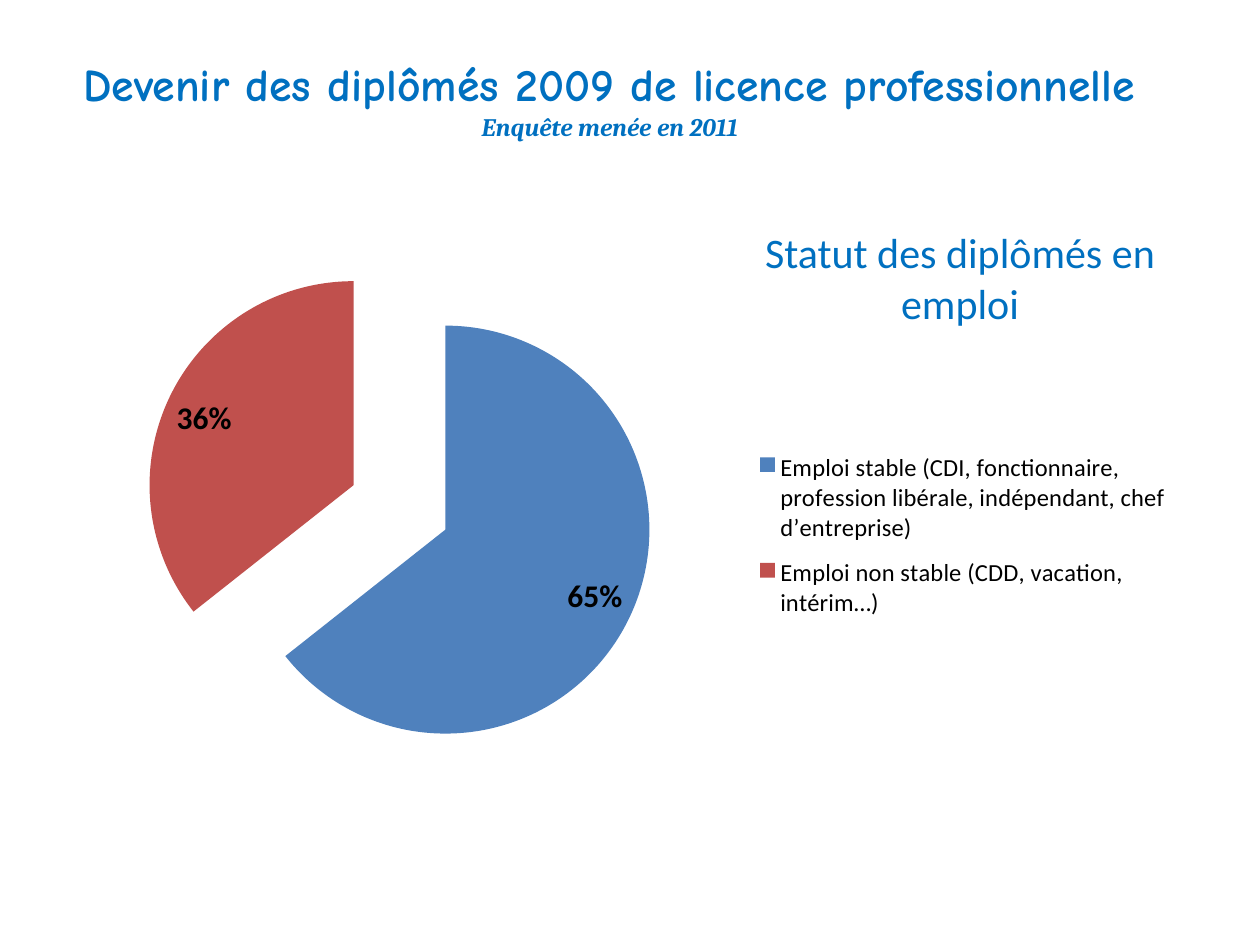
from dataclasses import dataclass

from lxml import etree
from pptx import Presentation
from pptx.chart.data import CategoryChartData
from pptx.dml.color import RGBColor
from pptx.enum import chart as ch, text
from pptx.oxml import ns
from pptx.util import Cm, Pt


@dataclass(frozen=True)
class Theme:
    accent: RGBColor = RGBColor(0x00, 0x70, 0xC0)
    ink: RGBColor = RGBColor(0, 0, 0)
    slices: tuple = (RGBColor(0x4F, 0x81, 0xBD), RGBColor(0xC0, 0x50, 0x4D))
    body_font: str = "Calibri"
    title_font: str = "Comic Neue"
    note_font: str = "Cambria"
    title: float = 26.1
    note: float = 14.4
    heading: float = 24
    label: float = 18
    legend: float = 14


THEME = Theme()


def style(font, name, size, color, bold=False, italic=False):
    font.name, font.size, font.color.rgb = name, Pt(size), color
    font.bold, font.italic = bold, italic


def add_text(s, box, lines, anchor=text.MSO_ANCHOR.TOP):
    """Centred text box; each line is (wording, font, size, bold, italic)."""
    tf = s.shapes.add_textbox(*map(Cm, box)).text_frame
    tf.word_wrap = True
    tf.vertical_anchor = anchor
    tf.text = "\n".join(line[0] for line in lines)
    for p, (_, name, size, bold, italic) in zip(tf.paragraphs, lines):
        p.alignment = text.PP_ALIGN.CENTER
        style(p.runs[0].font, name, size, THEME.accent, bold, italic)
    return tf


def add_title(s, box):
    tf = add_text(s, box, [
        ("Devenir des diplômés 2009 de licence professionnelle",
         THEME.title_font, THEME.title, True, False),
        ("Enquête menée en 2011", THEME.note_font, THEME.note, True, True),
    ], text.MSO_ANCHOR.MIDDLE)
    tf.margin_bottom = Cm(0.97)


def add_heading(s, box):
    add_text(s, box, [("Statut des diplômés en emploi",
                       THEME.body_font, THEME.heading, False, False)])


def set_layout(parent, before, x, y, w, h, inner=False):
    """Fix a chart part's place, as fractions of the chart."""
    for old in parent.findall(ns.qn("c:layout")):
        parent.remove(old)
    layout = etree.Element(ns.qn("c:layout"))
    manual = etree.SubElement(layout, ns.qn("c:manualLayout"))
    values = [("layoutTarget", "inner")] if inner else []
    values += [("xMode", "edge"), ("yMode", "edge"),
               ("x", x), ("y", y), ("w", w), ("h", h)]
    for tag, value in values:
        etree.SubElement(manual, ns.qn(f"c:{tag}")).set("val", str(value))
    parent.find(ns.qn(before)).addprevious(layout)


def add_status_pie(s, box):
    data = CategoryChartData()
    data.categories = [
        "Emploi stable (CDI, fonctionnaire, profession libérale, "
        "indépendant, chef d’entreprise)",
        "Emploi non stable (CDD, vacation, intérim…)",
    ]
    data.add_series("Series 1", (65, 36))
    chart = s.shapes.add_chart(ch.XL_CHART_TYPE.PIE, *map(Cm, box), data).chart
    chart.has_title = False
    style(chart.font, THEME.body_font, 10, THEME.ink)

    # Exploded slices
    plot = chart.plots[0]
    plot.vary_by_categories = True
    series = plot.series[0]
    for i, color in enumerate(THEME.slices):
        fill = series.points[i].format.fill
        fill.solid()
        fill.fore_color.rgb = color
    explosion = etree.Element(ns.qn("c:explosion"))
    explosion.set("val", "25")
    series._element.find(ns.qn("c:dPt")).addprevious(explosion)

    # Percentages
    labels = series.data_labels
    labels.show_value = True
    labels.number_format = '0"%"'
    labels.number_format_is_linked = False
    labels.position = ch.XL_LABEL_POSITION.INSIDE_END
    style(labels.font, THEME.body_font, THEME.label, THEME.ink, bold=True)

    # Legend
    chart.has_legend = True
    legend = chart.legend
    legend.position = ch.XL_LEGEND_POSITION.RIGHT
    legend.include_in_layout = False
    style(legend.font, THEME.body_font, THEME.legend, THEME.ink)

    plot_area = chart._chartSpace.find(".//" + ns.qn("c:plotArea"))
    set_layout(plot_area, "c:pieChart", 0, 0.03, 0.66, 0.91, inner=True)
    set_layout(legend._element, "c:overlay", 0.61, 0.36, 0.37, 0.35)


def main():
    prs = Presentation()
    prs.slide_width, prs.slide_height = Cm(25.4), Cm(19.05)
    s = prs.slides.add_slide(prs.slide_layouts[6])
    add_title(s, (0.89, 0.99, 22.81, 2.84))
    add_heading(s, (14.3, 4.45, 10.11, 2.31))
    add_status_pie(s, (0, 4.75, 24.41, 11.3))
    prs.save("out.pptx")


if __name__ == "__main__":
    main()
